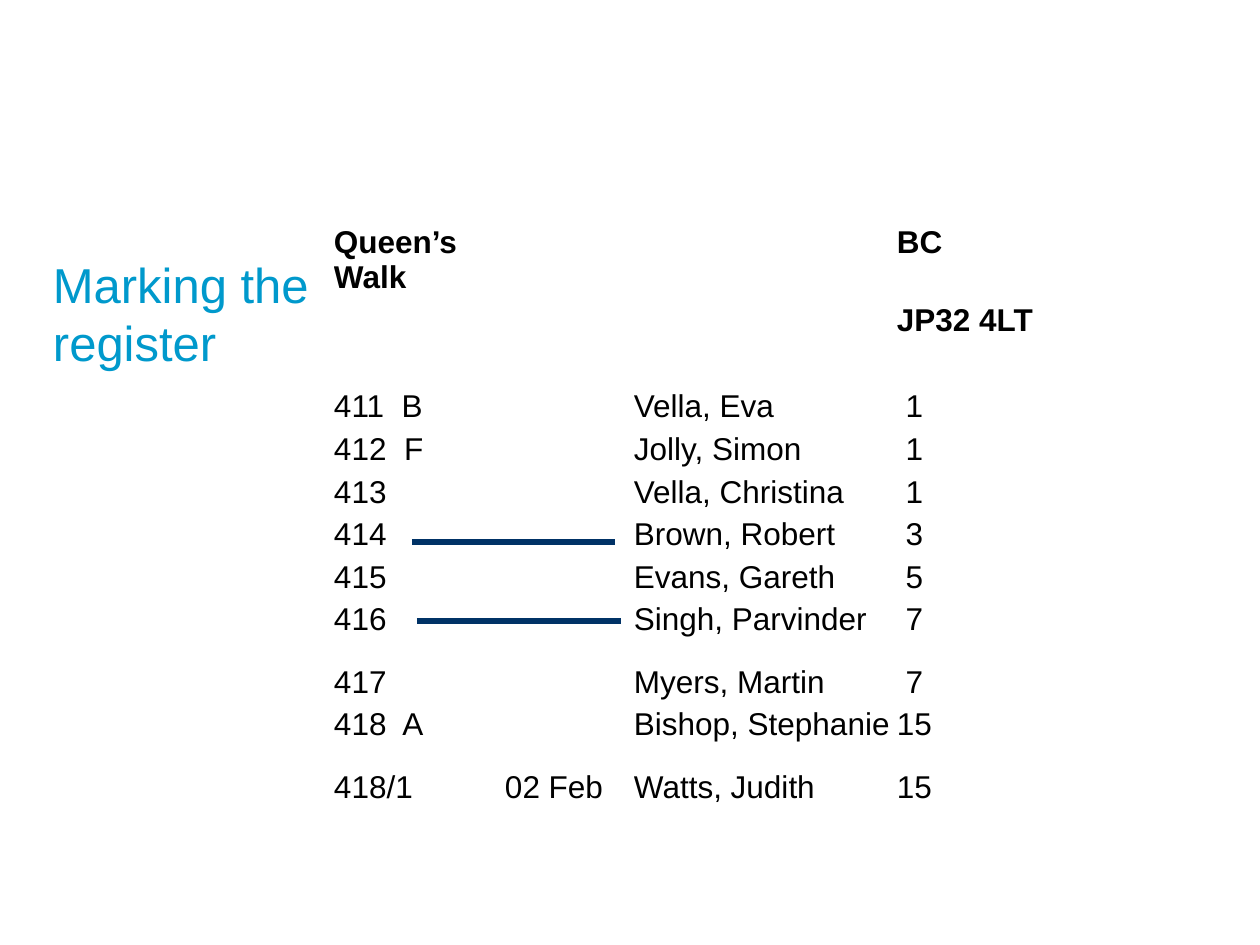
from typing import NamedTuple

from lxml.etree import SubElement
from pptx import Presentation
from pptx.dml.color import RGBColor
from pptx.enum.shapes import MSO_CONNECTOR as Conn
from pptx.oxml.ns import qn
from pptx.util import Emu, Pt

PPI = 126
FONT = "Arial"
WHITE = RGBColor(0xFF, 0xFF, 0xFF)
BLACK = RGBColor(0x00, 0x00, 0x00)
CYAN = RGBColor(0x00, 0x99, 0xCC)
NAVY = RGBColor(0x00, 0x32, 0x66)


class Row(NamedTuple):
    high: int
    cells: tuple[str, str, str, str] = ("", "", "", "")
    bold: bool = False


class Strike(NamedTuple):
    left: int
    right: int
    y: int


COLS = (171, 129, 263, 184)
ROWS = (
    Row(77, ("Queen’s Walk", "", "", "BC"), True),
    Row(47, ("", "", "", "JP32 4LT"), True),
    Row(39),
    Row(43, ("411  B", "", "Vella, Eva", " 1")),
    Row(43, ("412  F", "", "Jolly, Simon", " 1")),
    Row(42, ("413", "", "Vella, Christina", " 1")),
    Row(43, ("414", "", "Brown, Robert", " 3")),
    Row(42, ("415", "", "Evans, Gareth", " 5")),
    Row(63, ("416", "", "Singh, Parvinder", " 7")),
    Row(43, ("417", "", "Myers, Martin", " 7")),
    Row(63, ("418  A", "", "Bishop, Stephanie", "15")),
    Row(43, ("418/1", "02 Feb", "Watts, Judith", "15")),
    Row(22),
)
STRIKES = (Strike(412, 615, 542), Strike(417, 621, 621))


def px(n: int) -> Emu:
    return Emu(round(n * 914400 / PPI))


def add_run(para, text: str, size: int, color: RGBColor, bold: bool = False) -> None:
    run = para.add_run()
    run.text = text
    font = run.font
    font.name, font.size, font.bold = FONT, Pt(size), bold
    font.color.rgb = color


def add_title(slide) -> None:
    box = slide.shapes.add_textbox(px(53), px(252), px(346), px(588))
    frame = box.text_frame
    frame.word_wrap = True
    frame.margin_left = frame.margin_right = frame.margin_bottom = 0
    frame.margin_top = px(4)
    para = frame.paragraphs[0]
    para.line_spacing = Pt(33)
    add_run(para, "Marking the register", 28, CYAN)


def set_edges(cell) -> None:
    """Put a thin white line on each side; call before the fill is set."""
    props = cell._tc.get_or_add_tcPr()
    for side in ("lnL", "lnR", "lnT", "lnB"):
        line = SubElement(props, qn(f"a:{side}"), w=str(Pt(0.75)))
        fill = SubElement(line, qn("a:solidFill"))
        SubElement(fill, qn("a:srgbClr"), val=str(WHITE))


def fill_cell(cell, text: str, bold: bool) -> None:
    cell.margin_left = cell.margin_right = px(1)
    cell.margin_top = cell.margin_bottom = px(1)
    set_edges(cell)
    cell.fill.solid()
    cell.fill.fore_color.rgb = WHITE
    para = cell.text_frame.paragraphs[0]
    if text:
        add_run(para, text, 18, BLACK, bold)
    else:
        # A small end mark keeps an empty row from growing
        SubElement(para._p, qn("a:endParaRPr"), sz="800")


def add_register(slide) -> None:
    high = sum(row.high for row in ROWS)
    frame = slide.shapes.add_table(
        len(ROWS), len(COLS), px(333), px(224), px(sum(COLS)), px(high)
    )
    table = frame.table
    table.first_row = table.horz_banding = False
    for col, wide in zip(table.columns, COLS):
        col.width = px(wide)
    for line, row in zip(table.rows, ROWS):
        line.height = px(row.high)
        for cell, text in zip(line.cells, row.cells):
            fill_cell(cell, text, row.bold)


def add_strike(slide, mark: Strike) -> None:
    line = slide.shapes.add_connector(
        Conn.STRAIGHT, px(mark.left), px(mark.y), px(mark.right), px(mark.y)
    )
    line.line.color.rgb = NAVY
    line.line.width = Pt(3)
    SubElement(line._element.spPr, qn("a:effectLst"))


def main() -> None:
    deck = Presentation()
    deck.slide_width, deck.slide_height = px(1260), px(945)
    slide = deck.slides.add_slide(deck.slide_layouts[6])
    add_title(slide)
    add_register(slide)
    for mark in STRIKES:
        add_strike(slide, mark)
    deck.save("out.pptx")


if __name__ == "__main__":
    main()
